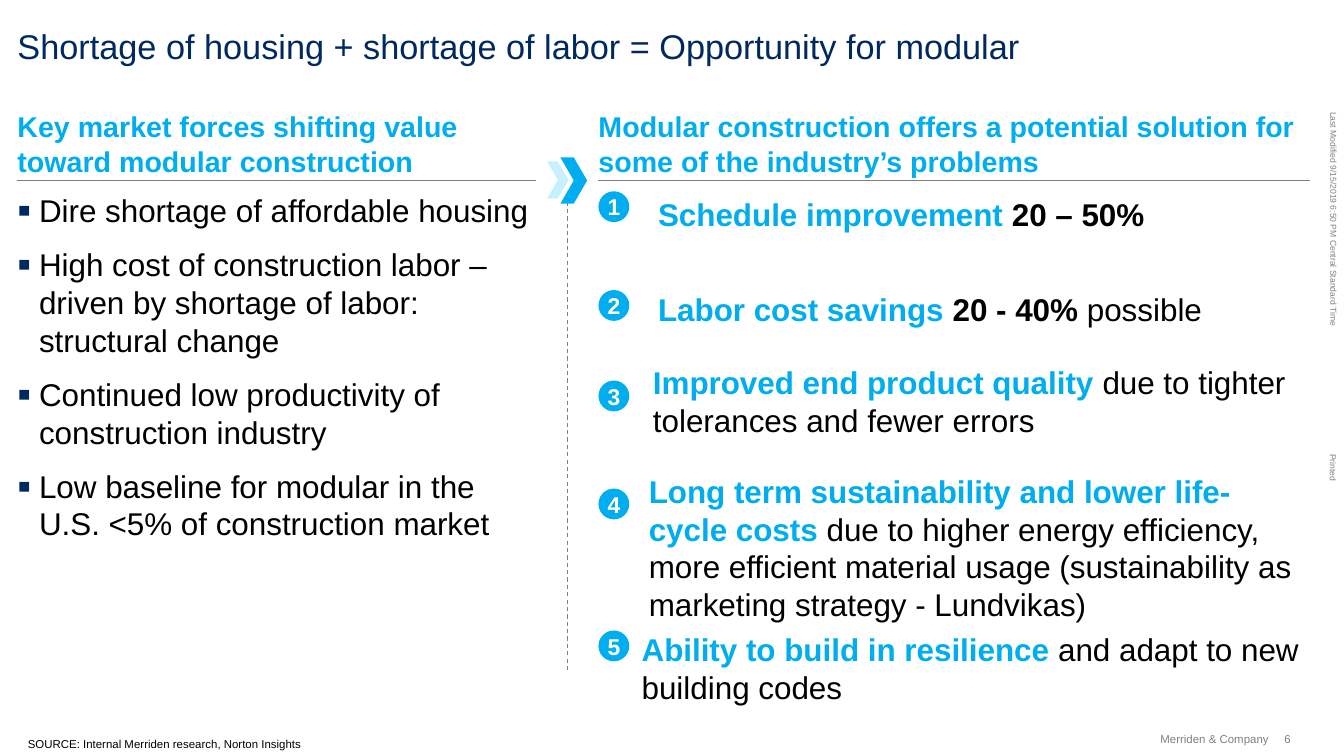
from lxml import etree
from pptx import Presentation
from pptx import util as u
from pptx.dml.color import RGBColor
from pptx.enum import dml, shapes, text
from pptx.oxml import ns

Inches, Pt = u.Inches, u.Pt
COLORS = {"navy": "002960", "cyan": "00ADEF", "pale": "C9F0FF",
          "gray": "808080", "black": "000000", "white": "FFFFFF"}
ANCHOR = text.MSO_ANCHOR
ALIGN = text.PP_ALIGN
COLUMNS = [
    (0.17, 5.04, "Key market forces shifting value toward modular construction"),
    (5.82, 6.92, "Modular construction offers a potential solution for "
                 "some of the industry’s problems"),
]
FORCES = [
    "Dire shortage of affordable housing",
    "High cost of construction labor – driven by shortage of labor: structural change",
    "Continued low productivity of construction industry",
    "Low baseline for modular in the U.S. <5% of construction market",
]
BENEFITS = [
    (1.86, 6.4, 1.9, 0.37, [("Schedule improvement ", "cyan", True),
                            ("20 – 50%", "black", True)]),
    (2.82, 6.4, 2.82, 0.37, [("Labor cost savings ", "cyan", True),
                             ("20 - 40% ", "black", True),
                             ("possible", "black", False)]),
    (3.7, 6.35, 3.53, 0.74, [("Improved end product quality ", "cyan", True),
                             ("due to tighter tolerances and fewer errors", "black", False)]),
    (4.75, 6.31, 4.59, 1.48, [("Long term sustainability and lower life-cycle costs ", "cyan", True),
                              ("due to higher energy efficiency, more efficient material usage "
                               "(sustainability as marketing strategy - Lundvikas)", "black", False)]),
    (6.13, 6.24, 6.13, 0.74, [("Ability to build in resilience ", "cyan", True),
                              ("and adapt to new building codes", "black", False)]),
]


def rgb(name):
    return RGBColor.from_string(COLORS[name])


def apply_format(target, values):
    for name, value in values.items():
        setattr(target, name, value)


def set_frame(shape, **values):
    defaults = {"margin_left": 0, "margin_top": 0, "margin_right": 0, "margin_bottom": 0,
                "word_wrap": True, "vertical_anchor": ANCHOR.TOP}
    apply_format(shape.text_frame, {**defaults, **values})


def add_run(paragraph, words, size, color, bold=False):
    run = paragraph.add_run()
    run.text = words
    apply_format(run.font, {"name": "Arial", "size": Pt(size), "bold": bold})
    run.font.color.rgb = rgb(color)


def add_text(slide, box, runs, size, align=ALIGN.LEFT, rotation=0, **frame):
    shape = slide.shapes.add_textbox(*map(Inches, box))
    shape.rotation = rotation
    set_frame(shape, **frame)
    paragraph = shape.text_frame.paragraphs[0]
    paragraph.alignment = align
    for words, color, bold in runs:
        add_run(paragraph, words, size, color, bold)


def add_line(slide, start, end, width, dash=None):
    line = slide.shapes.add_connector(shapes.MSO_CONNECTOR.STRAIGHT,
                                      *map(Inches, start + end))
    apply_format(line.line, {"width": Pt(width), "dash_style": dash})
    line.line.color.rgb = rgb("gray")
    etree.SubElement(line._element.spPr, ns.qn("a:effectLst"))


def paint(shape, color):
    shape.shadow.inherit = False
    shape.fill.solid()
    shape.fill.fore_color.rgb = rgb(color)
    shape.line.fill.background()


def add_chevron(slide, left, top, width, height, color):
    middle, right, bottom = left + width / 2, left + width, top + height
    center = top + height / 2
    points = [(middle, top), (right, center), (middle, bottom), (left, bottom), (middle, center)]
    builder = slide.shapes.build_freeform(Inches(left), Inches(top))
    builder.add_line_segments([(Inches(x), Inches(y)) for x, y in points], close=True)
    paint(builder.convert_to_shape(), color)


def add_heading(slide, left, width, words):
    add_text(slide, (left, 1.06, width, 0.69), [(words, "cyan", True)], 20,
             vertical_anchor=ANCHOR.BOTTOM, margin_bottom=Inches(0.02))
    add_line(slide, (left, 1.75), (left + width, 1.75), 0.5)


def add_bullet(paragraph):
    properties = paragraph._p.get_or_add_pPr()
    properties.set("marL", str(Inches(0.21)))
    properties.set("indent", str(-Inches(0.21)))
    color = etree.SubElement(properties, ns.qn("a:buClr"))
    etree.SubElement(color, ns.qn("a:srgbClr"), val=COLORS["navy"])
    etree.SubElement(properties, ns.qn("a:buSzPct"), val="125000")
    etree.SubElement(properties, ns.qn("a:buFont"), typeface="Arial")
    etree.SubElement(properties, ns.qn("a:buChar"), char="▪")


def add_bullet_list(slide, box, items):
    shape = slide.shapes.add_textbox(*map(Inches, box))
    set_frame(shape)
    frame = shape.text_frame
    for index, words in enumerate(items):
        paragraph = frame.add_paragraph() if index else frame.paragraphs[0]
        add_bullet(paragraph)
        paragraph.space_before = Pt(11.5 if index else 0)
        add_run(paragraph, words, 22, "black")


def add_badge(slide, number, top):
    badge = slide.shapes.add_shape(shapes.MSO_SHAPE.OVAL,
                                   *map(Inches, (5.82, top, 0.3, 0.3)))
    paint(badge, "cyan")
    set_frame(badge, word_wrap=False, vertical_anchor=ANCHOR.MIDDLE)
    paragraph = badge.text_frame.paragraphs[0]
    paragraph.alignment = ALIGN.CENTER
    add_run(paragraph, str(number), 16, "white", True)


def add_margin_notes(slide):
    for box, words in [
        ((11.89, 2.12, 2.16, 0.1), "Last Modified 9/15/2019 6:50 PM Central Standard Time"),
        ((12.83, 4.5, 0.27, 0.1), "Printed"),
    ]:
        add_text(slide, box, [(words, "gray", False)], 6, rotation=90, word_wrap=False)


def add_footer(slide):
    add_text(slide, (0.27, 7.17, 10.68, 0.13),
             [("SOURCE: Internal Merriden research, Norton Insights", "black", False)], 8)
    for box, words, align in [
        ((11.23, 7.12, 1.11, 0.13), "Merriden & Company", ALIGN.RIGHT),
        ((12.49, 7.12, 0.14, 0.13), "6", ALIGN.LEFT),
    ]:
        add_text(slide, box, [(words, "gray", False)], 8, align,
                 word_wrap=False, vertical_anchor=ANCHOR.MIDDLE)


def main():
    presentation = Presentation()
    apply_format(presentation, {"slide_width": Inches(13.07), "slide_height": Inches(7.35)})
    slide = presentation.slides.add_slide(presentation.slide_layouts[6])
    add_margin_notes(slide)
    add_text(slide, (0.17, 0.25, 12.57, 0.4),
             [("Shortage of housing + shortage of labor = Opportunity for modular", "navy", False)], 24)
    for left, width, words in COLUMNS:
        add_heading(slide, left, width, words)
    add_line(slide, (5.52, 1.96), (5.52, 6.51), 0.75, dml.MSO_LINE.DASH)
    add_chevron(slide, 5.32, 1.57, 0.21, 0.36, "pale")
    add_chevron(slide, 5.45, 1.53, 0.26, 0.45, "cyan")
    add_bullet_list(slide, (0.17, 1.86, 5.04, 3.52), FORCES)
    for number, (badge_top, left, top, height, runs) in enumerate(BENEFITS, 1):
        add_badge(slide, number, badge_top)
        add_text(slide, (left, top, 6.4, height), runs, 22)
    add_footer(slide)
    presentation.save("out.pptx")


if __name__ == "__main__":
    main()
